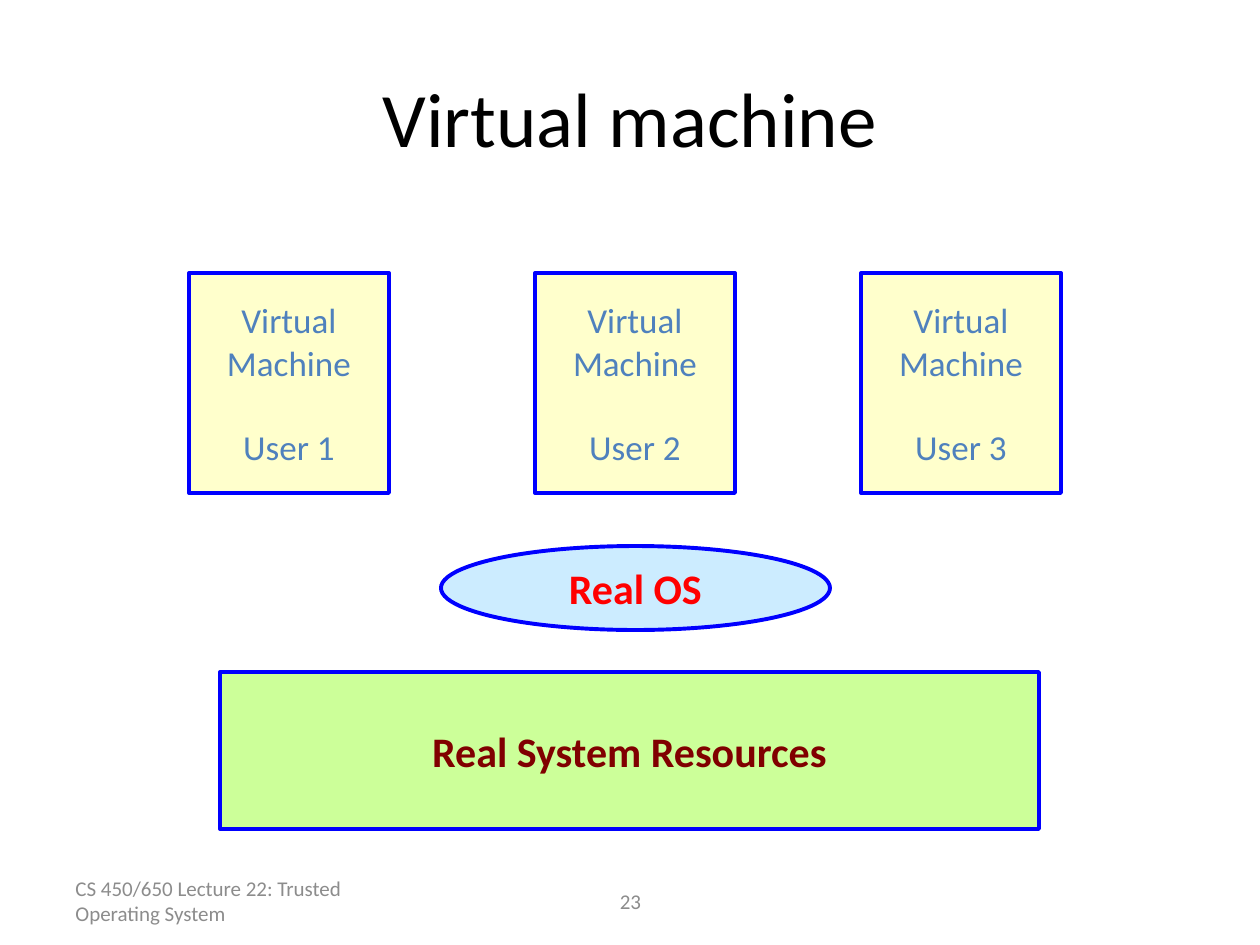
import pptx
import pptx.util
from pptx.dml.color import RGBColor
from pptx.enum.shapes import MSO_SHAPE
from pptx.enum.text import MSO_ANCHOR, PP_ALIGN

COLORS = {
    "title": "000000", "outline": "0000FF", "footer": "8C8C8C",
    "machine": "FFFFCC", "machine_text": "4F81BD",
    "os": "CCECFF", "os_text": "FF0000",
    "resources": "CCFF99", "resources_text": "800000",
}
FONT = "Calibri"
TITLE = "Virtual machine"
USERS = [("User 1", 189), ("User 2", 535), ("User 3", 861)]  # label, left
MACHINE_TOP, MACHINE_W, MACHINE_H = 273, 200, 220
# shape, text, box, colour name
LAYERS = [
    (MSO_SHAPE.RECTANGLE, "Real System Resources", (220, 672, 819, 157), "resources"),
    (MSO_SHAPE.OVAL, "Real OS", (441, 546, 389, 84), "os"),
]
# text, box, alignment
FOOTERS = [
    ("CS 450/650 Lecture 22: Trusted Operating System", (63, 876, 294, 50), PP_ALIGN.LEFT),
    ("23", (431, 876, 399, 50), PP_ALIGN.CENTER),
]


def px(n):
    return pptx.util.Emu(round(n * 914400 / 126))


def color(name):
    return RGBColor.from_string(COLORS[name])


def write(tf, lines, size, color_name, align=PP_ALIGN.CENTER, bold=False):
    """Fill a text frame with one paragraph per line, centred vertically."""
    tf.vertical_anchor = MSO_ANCHOR.MIDDLE
    tf.text = "\n".join(lines)
    for p in tf.paragraphs:
        p.alignment = align
        p.font.name, p.font.size, p.font.bold = FONT, pptx.util.Pt(size), bold
        p.font.color.rgb = color(color_name)


def add_block(s, kind, box, name, lines, size, bold=False):
    """Add an outlined shape whose fill and text colours share one name."""
    sp = s.shapes.add_shape(kind, *map(px, box))
    sp.shadow.inherit = False
    sp.fill.solid()
    sp.fill.fore_color.rgb = color(name)
    sp.line.color.rgb = color("outline")
    sp.line.width = pptx.util.Pt(2.25)
    tf = sp.text_frame
    tf.margin_left = tf.margin_right = tf.margin_top = tf.margin_bottom = 0
    tf.word_wrap = False
    write(tf, lines, size, f"{name}_text", bold=bold)
    return tf


def main():
    prs = pptx.Presentation()
    prs.slide_width, prs.slide_height = px(1260), px(945)
    s = prs.slides.add_slide(prs.slide_layouts[5])

    title = s.shapes.title
    title.left, title.top, title.width, title.height = map(px, (63, 38, 1134, 157))
    write(title.text_frame, [TITLE], 44, "title")

    for kind, text, box, name in LAYERS:
        add_block(s, kind, box, name, [text], 24, bold=True)

    for user, left in USERS:
        box = (left, MACHINE_TOP, MACHINE_W, MACHINE_H)
        tf = add_block(s, MSO_SHAPE.RECTANGLE, box, "machine",
                       ["Virtual", "Machine", user], 20)
        tf.paragraphs[-1].space_before = pptx.util.Pt(24)

    for text, box, align in FOOTERS:
        tf = s.shapes.add_textbox(*map(px, box)).text_frame
        tf.word_wrap = True
        write(tf, [text], 12, "footer", align)

    prs.save("out.pptx")


if __name__ == "__main__":
    main()
